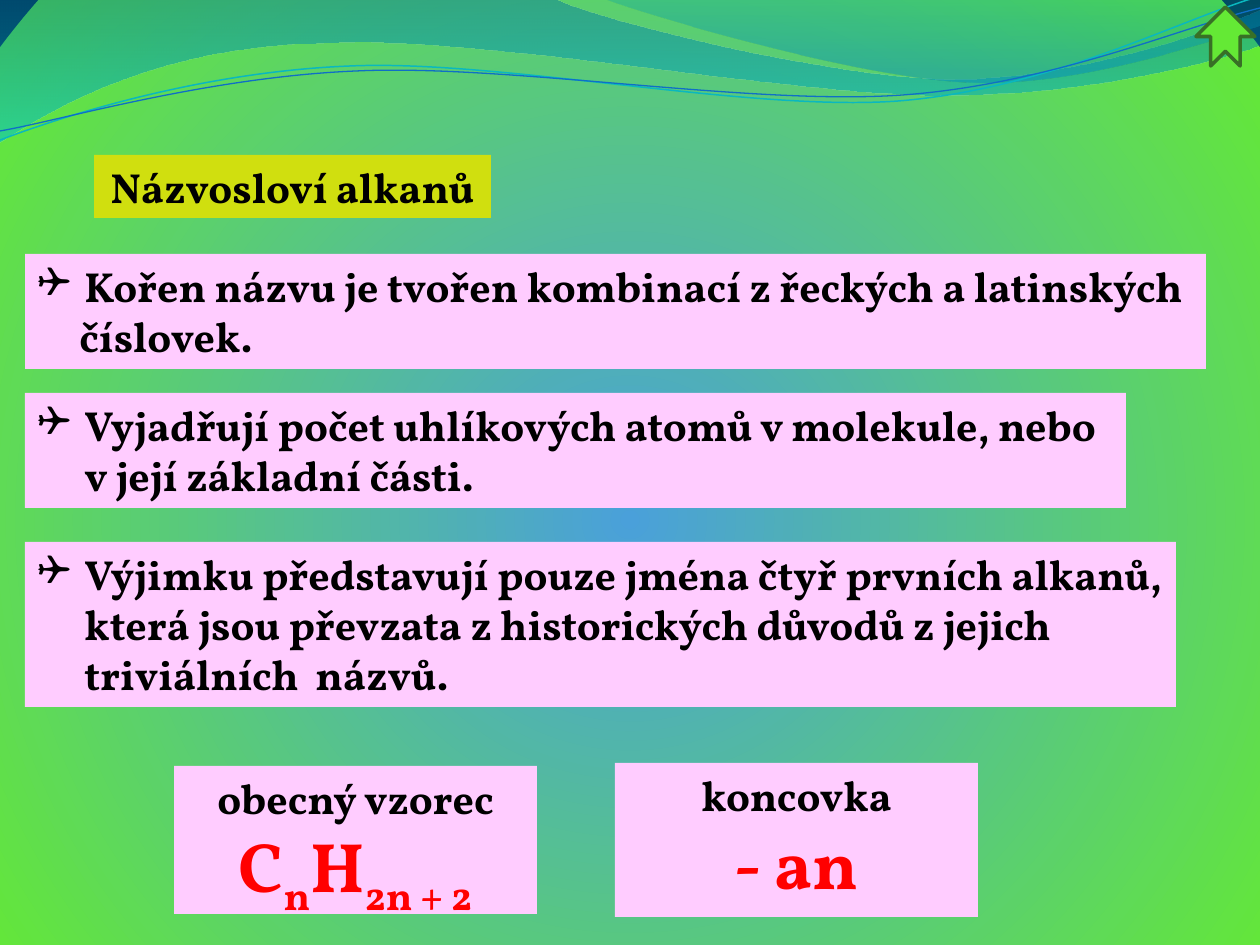
from lxml.etree import SubElement
from pptx import Presentation
from pptx.dml.color import RGBColor
from pptx.enum.shapes import MSO_SHAPE
from pptx.enum.text import MSO_AUTO_SIZE, PP_ALIGN
from pptx.oxml.ns import qn
from pptx.util import Pt

PX = 914400 // 126
FONT, BLACK, RED, PINK = "Vollkorn", "000000", "FF0000", "FFCCFF"
LEFT, HANG = 25, 47

# Gradient stops: percent, colour, opacity percent
BACK = [(0, "4AA0DA", 100), (100, "64E935", 100), (100, "002845", 100)]

# A path is a start point, then lines (2 numbers) and curves (6 numbers)
WAVES = [
    ([(0, 0), (554, -1), (600, 21, 837, 79, 955, 79),
      (1074, 79, 1207, 33, 1260, 11), (1261, 45),
      (1238, 55, 1096, 96, 940, 95), (784, 95, 481, 35, 324, 43),
      (163, 45, 58, 105, -1, 142)],
     [(0, "0074A1", 45), (100, "00C6CF", 55)]),
    ([(604, -1), (641, 14, 859, 78, 969, 82),
      (1079, 87, 1211, 40, 1260, 26), (1260, 0)],
     [(0, "00A1A9", 30), (80, "008BBF", 45)]),
]
STRANDS = [
    ([(0, 140), (60, 117, 199, 72, 349, 66), (498, 59, 747, 112, 898, 101),
      (1050, 89, 1182, 19, 1257, -3)], "0AB8BF", 0.85),
    ([(0, 131), (59, 121, 207, 77, 357, 71), (508, 64, 752, 106, 903, 95),
      (1053, 84, 1185, 26, 1260, 8)], "0F6FC6", 0.75),
]

# Top, width, height, paragraphs as (text, left margin, has bullet)
POINTS = [
    (254, 1181, 115, [
        ("Kořen názvu je tvořen kombinací z\u00a0řeckých\u00a0a\u00a0latinských",
         HANG, True),
        ("číslovek.", 42, False)]),
    (393, 1101, 115, [
        ("Vyjadřují počet uhlíkových atomů v molekule, nebo\vv její základní části.",
         HANG, True)]),
    (542, 1151, 165, [
        ("Výjimku představují pouze jména čtyř prvních alkanů, která jsou převzata "
         "z historických důvodů z jejich triviálních  názvů.", HANG, True)]),
]

# Place, fill, paragraphs of runs (text, size, colour, baseline)
LABELS = [
    ((94, 155, 397, 63), "D0DF0F", [[("Názvosloví alkanů", 24, BLACK, 0)]]),
    ((174, 766, 363, 148), PINK, [
        [("obecný vzorec ", 24, BLACK, 0),
         ("C", 40, RED, 0), ("n", 40, RED, -25),
         ("H", 40, RED, 0), ("2n + 2", 40, RED, -25)]]),
    ((615, 763, 363, 154), PINK, [
        [("koncovka", 24, BLACK, 0)], [("- an", 40, RED, 0)]]),
]


def rgb(code):
    return RGBColor.from_string(code)


def blend(fill, node, stops, radial=False):
    """Turn the fill found in node into a gradient with opacity."""
    fill.solid()
    solid = next(node.iter(qn("a:solidFill")))
    grad = solid.makeelement(qn("a:gradFill"), {"rotWithShape": "1"})
    group = SubElement(grad, qn("a:gsLst"))
    for pos, code, alpha in stops:
        stop = SubElement(group, qn("a:gs"), pos=str(pos * 1000))
        tint = SubElement(stop, qn("a:srgbClr"), val=code)
        if alpha < 100:
            SubElement(tint, qn("a:alpha"), val=str(alpha * 1000))
    if radial:
        way = SubElement(grad, qn("a:path"), path="circle")
        SubElement(way, qn("a:fillToRect"), l="10000", t="110000", r="10000", b="100000")
    else:
        SubElement(grad, qn("a:lin"), ang="5400000", scaled="0")
    solid.getparent().replace(solid, grad)


def draw(slide, route, close):
    """Build the path with straight lines, then join triples into curves."""
    start, *parts = route
    pen = slide.shapes.build_freeform(*start, scale=PX)
    spots = [part[i:i + 2] for part in parts for i in range(0, len(part), 2)]
    pen.add_line_segments(spots, close=close)
    shape = pen.convert_to_shape()
    shape.shadow.inherit = False
    lines = iter(list(shape._element.iter(qn("a:lnTo"))))
    for part in parts:
        group = [next(lines) for _ in range(len(part) // 2)]
        if len(group) == 3:
            curve = group[0].makeelement(qn("a:cubicBezTo"), {})
            group[0].addprevious(curve)
            for line in group:
                curve.append(line[0])
                line.getparent().remove(line)
    return shape


def write(para, text, size=24, color=BLACK, base=0):
    for i, piece in enumerate(text.split("\v")):
        if i:
            para.add_line_break()
        run = para.add_run()
        run.text = piece
        look = {"name": FONT, "size": Pt(size), "bold": True}
        for key, value in look.items():
            setattr(run.font, key, value)
        run.font.color.rgb = rgb(color)
        if base:
            run.font._element.set("baseline", str(base * 1000))


def panel(slide, place, color, count):
    """Add a filled text box and return its paragraphs."""
    box = slide.shapes.add_textbox(*(n * PX for n in place))
    box.fill.solid()
    box.fill.fore_color.rgb = rgb(color)
    frame = box.text_frame
    frame.word_wrap = True
    frame.auto_size = MSO_AUTO_SIZE.SHAPE_TO_FIT_TEXT
    return [frame.paragraphs[0]] + [frame.add_paragraph() for _ in range(count - 1)]


def main():
    deck = Presentation()
    deck.slide_width, deck.slide_height = 1260 * PX, 945 * PX
    slide = deck.slides.add_slide(deck.slide_layouts[6])
    blend(slide.background.fill, slide._element, BACK, radial=True)

    for route, stops in WAVES:
        wave = draw(slide, route, True)
        blend(wave.fill, wave._element.spPr, stops)
        wave.line.fill.background()
    for route, color, width in STRANDS:
        strand = draw(slide, route, False)
        strand.fill.background()
        strand.line.color.rgb = rgb(color)
        strand.line.width = Pt(width)

    for place, color, rows in LABELS:
        for para, runs in zip(panel(slide, place, color, len(rows)), rows):
            para.alignment = PP_ALIGN.CENTER
            for run in runs:
                write(para, *run)

    for top, width, height, rows in POINTS:
        paras = panel(slide, (LEFT, top, width, height), PINK, len(rows))
        for para, (text, margin, mark) in zip(paras, rows):
            props = para._p.get_or_add_pPr()
            props.set("marL", str(margin * PX))
            if mark:
                props.set("indent", str(-margin * PX))
                SubElement(props, qn("a:buFont"), typeface="Wingdings")
                SubElement(props, qn("a:buChar"), char="❑")
            write(para, text)

    arrow = slide.shapes.add_shape(MSO_SHAPE.NOTCHED_RIGHT_ARROW,
                                   *(n * PX for n in (1196, 7, 59, 59)))
    arrow.rotation = 270
    arrow.shadow.inherit = False
    arrow.fill.solid()
    arrow.fill.fore_color.rgb = rgb("64E935")
    arrow.line.color.rgb = rgb("387026")
    arrow.line.width = Pt(2)
    deck.save("out.pptx")


if __name__ == "__main__":
    main()
